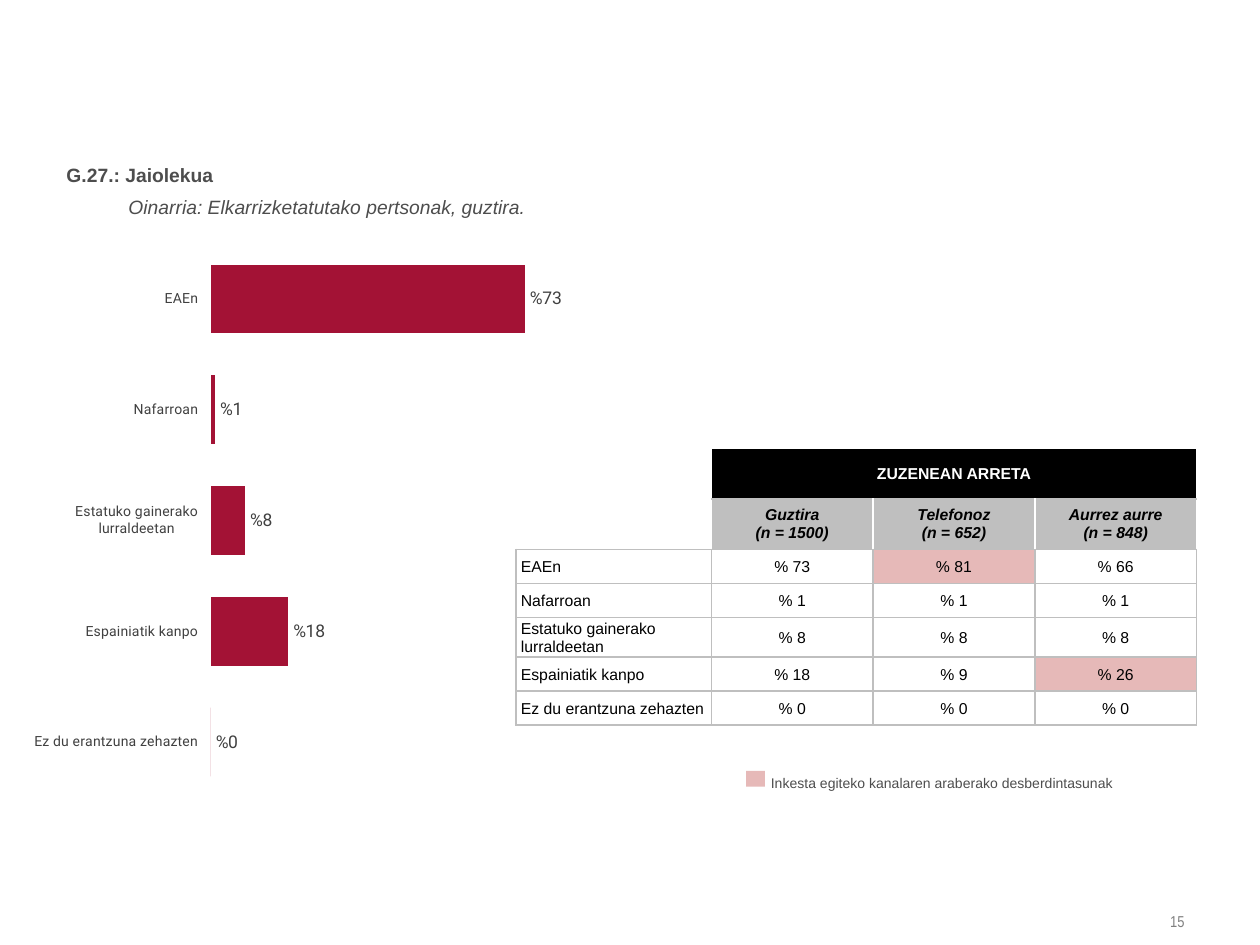
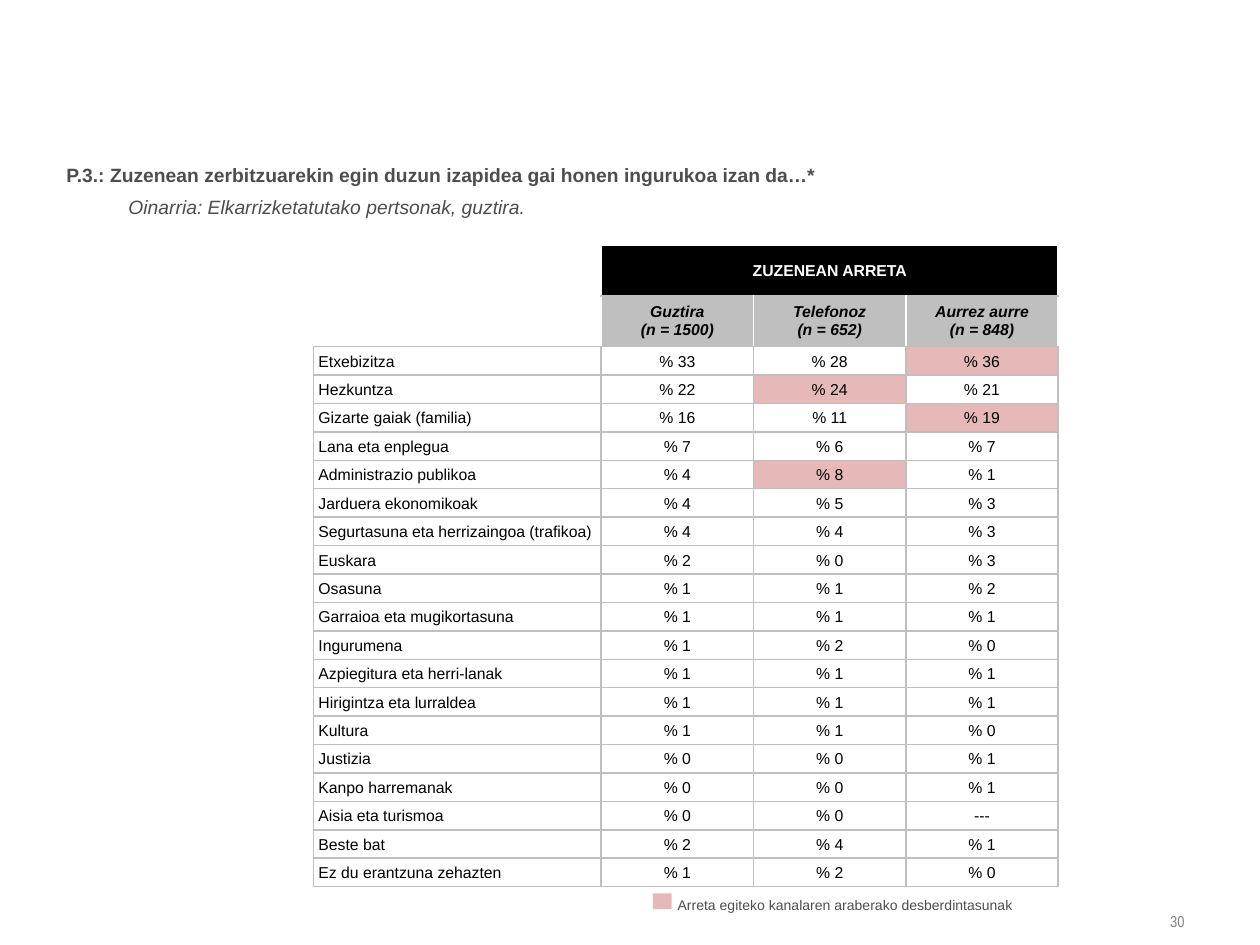
from dataclasses import dataclass
from typing import NamedTuple, Optional

from lxml import etree
from pptx import Presentation
from pptx.chart.data import CategoryChartData
from pptx.dml.color import RGBColor
from pptx.enum.chart import XL_CHART_TYPE, XL_LABEL_POSITION, XL_TICK_MARK
from pptx.enum.shapes import MSO_SHAPE
from pptx.enum.text import MSO_ANCHOR, MSO_AUTO_SIZE, PP_ALIGN
from pptx.oxml.ns import qn
from pptx.util import Cm, Pt

BAR = XL_CHART_TYPE.BAR_CLUSTERED
OUTSIDE_END = XL_LABEL_POSITION.OUTSIDE_END
TICK_NONE = XL_TICK_MARK.NONE
RECT = MSO_SHAPE.RECTANGLE
TOP, MIDDLE = MSO_ANCHOR.TOP, MSO_ANCHOR.MIDDLE
LEFT, CENTER, RIGHT = PP_ALIGN.LEFT, PP_ALIGN.CENTER, PP_ALIGN.RIGHT
NO_AUTOFIT = MSO_AUTO_SIZE.NONE
TITLE_ONLY = 5

COLORS = {
    "white": "FFFFFF",
    "black": "000000",
    "text": "4D4D4D",
    "chart_text": "404040",
    "page": "808080",
    "grid": "BFBFBF",
    "marked": "E6B9B8",
    "bar": "A31235",
}

# Font formats
QUESTION = {"name": "Arial", "size": Pt(11), "bold": True, "italic": False}
BASE = {"name": "Arial", "size": Pt(11), "bold": False, "italic": True}
LEGEND = {"name": "Arial", "size": Pt(8)}
PAGE = {"name": "Arial Narrow", "size": Pt(9)}
BODY = {"name": "Arial", "size": Pt(9), "bold": False, "italic": False}
BAND = {**BODY, "bold": True}
HEAD = {**BAND, "italic": True}

# Frame formats
BOX_INSETS = {"margin_left": Cm(0.1), "margin_top": Cm(0.13),
              "margin_right": Cm(0.25), "margin_bottom": Cm(0.13)}
VALUE_INSETS = {"margin_left": Cm(0.03), "margin_top": Cm(0.03),
                "margin_right": Cm(0.03), "margin_bottom": Cm(0)}
LABEL_INSETS = {**VALUE_INSETS, "margin_left": Cm(0.1), "margin_right": Cm(0)}

BASE_TEXT = "Oinarria: Elkarrizketatutako pertsonak, guztira."
BAND_TEXT = "ZUZENEAN ARRETA"
HEADS = ("Guztira\n(n = 1500)", "Telefonoz\n(n = 652)", "Aurrez aurre\n(n = 848)")


class Row(NamedTuple):
    label: str
    values: tuple[Optional[int], ...]
    marked: Optional[int] = None


@dataclass
class TableSpec:
    left: float
    top: float
    label_width: float
    value_width: float
    head_heights: tuple[float, float]
    body_height: float
    rows: list[Row]


@dataclass
class Legend:
    left: float
    top: float
    text: str


@dataclass
class Page:
    number: int
    question: str
    table: TableSpec
    legend: Legend
    has_chart: bool = False


PAGES = [
    Page(
        15, "G.27.: Jaiolekua",
        TableSpec(10.4, 9.04, 3.94, 3.26, (0.96, 1.02), 3.43, [
            Row("EAEn", (73, 81, 66), 1),
            Row("Nafarroan", (1, 1, 1)),
            Row("Estatuko gainerako lurraldeetan", (8, 8, 8)),
            Row("Espainiatik kanpo", (18, 9, 26), 2),
            Row("Ez du erantzuna zehazten", (0, 0, 0)),
        ]),
        Legend(15.04, 15.11, "Inkesta egiteko kanalaren araberako desberdintasunak"),
        has_chart=True,
    ),
    Page(
        30, "P.3.: Zuzenean zerbitzuarekin egin duzun izapidea gai honen ingurukoa izan da…*",
        TableSpec(6.32, 4.95, 5.8, 3.07, (0.8, 1.02), 10.9, [
            Row("Etxebizitza", (33, 28, 36), 2),
            Row("Hezkuntza", (22, 24, 21), 1),
            Row("Gizarte gaiak (familia)", (16, 11, 19), 2),
            Row("Lana eta enplegua", (7, 6, 7)),
            Row("Administrazio publikoa", (4, 8, 1), 1),
            Row("Jarduera ekonomikoak", (4, 5, 3)),
            Row("Segurtasuna eta herrizaingoa (trafikoa)", (4, 4, 3)),
            Row("Euskara", (2, 0, 3)),
            Row("Osasuna", (1, 1, 2)),
            Row("Garraioa eta mugikortasuna", (1, 1, 1)),
            Row("Ingurumena", (1, 2, 0)),
            Row("Azpiegitura eta herri-lanak", (1, 1, 1)),
            Row("Hirigintza eta lurraldea", (1, 1, 1)),
            Row("Kultura", (1, 1, 0)),
            Row("Justizia", (0, 0, 1)),
            Row("Kanpo harremanak", (0, 0, 1)),
            Row("Aisia eta turismoa", (0, 0, None)),
            Row("Beste bat", (2, 4, 1)),
            Row("Ez du erantzuna zehazten", (1, 2, 0)),
        ]),
        Legend(13.16, 17.58, "Arreta egiteko kanalaren araberako desberdintasunak"),
    ),
]


def rgb(color: str) -> RGBColor:
    return RGBColor.from_string(COLORS[color])


def apply(obj, fmt: dict) -> None:
    for name, value in fmt.items():
        setattr(obj, name, value)


def add_run(p, text: str, fmt: dict, color: str) -> None:
    r = p.add_run()
    r.text = text
    apply(r.font, fmt)
    r.font.color.rgb = rgb(color)


def set_indent(p, margin: float, first: float) -> None:
    pPr = p._p.get_or_add_pPr()
    pPr.set("marL", str(Cm(margin)))
    pPr.set("indent", str(Cm(first)))


def add_title(slide, question: str) -> None:
    sp = slide.shapes.title
    apply(sp, {"left": Cm(1.24), "top": Cm(3), "width": Cm(22.89), "height": Cm(1.53)})
    tf = sp.text_frame
    apply(tf, {**BOX_INSETS, "word_wrap": True, "auto_size": NO_AUTOFIT,
               "vertical_anchor": TOP})
    p = tf.paragraphs[0]
    apply(p, {"alignment": LEFT, "line_spacing": Pt(18)})
    set_indent(p, 1.25, -1.25)
    add_run(p, question, QUESTION, "text")
    p.add_line_break()
    etree.SubElement(p._p[-1], qn("a:rPr"), sz="1100")
    add_run(p, BASE_TEXT, BASE, "text")


def add_page_number(slide, number: int) -> None:
    tf = slide.shapes.add_textbox(Cm(22.1), Cm(18.21), Cm(2.03), Cm(0.71)).text_frame
    apply(tf, {"word_wrap": True, "vertical_anchor": MIDDLE})
    p = tf.paragraphs[0]
    p.alignment = RIGHT
    add_run(p, str(number), PAGE, "page")


def add_legend(slide, legend: Legend) -> None:
    sp = slide.shapes.add_shape(RECT, Cm(legend.left), Cm(legend.top + 0.43),
                                Cm(0.38), Cm(0.32))
    sp.shadow.inherit = False
    sp.fill.solid()
    sp.fill.fore_color.rgb = rgb("marked")
    sp.line.fill.background()
    tf = slide.shapes.add_textbox(Cm(legend.left + 0.25), Cm(legend.top),
                                  Cm(7.67), Cm(0.86)).text_frame
    apply(tf, {**BOX_INSETS, "word_wrap": True})
    p = tf.paragraphs[0]
    p.line_spacing = Pt(20)
    set_indent(p, 0.15, 0)
    add_run(p, legend.text, LEGEND, "text")


def set_borders(cell, row: int, col: int) -> None:
    """Grey grid, with white edges around the header cells."""
    white = set()
    if row < 2:
        white = {"L", "R"}
        if row == 0 or col == 0:
            white.add("T")
        if row == col == 0:
            white.add("B")
    tcPr = cell._tc.get_or_add_tcPr()
    for side in "LRTB":
        ln = etree.SubElement(tcPr, qn(f"a:ln{side}"), w=str(Pt(1)))
        fill = etree.SubElement(ln, qn("a:solidFill"))
        color = COLORS["white" if side in white else "grid"]
        etree.SubElement(fill, qn("a:srgbClr"), val=color)


def fill_cell(cell, text: str, fmt: dict, color: str, fill: str,
              align=CENTER, insets: Optional[dict] = None) -> None:
    cell.fill.solid()
    cell.fill.fore_color.rgb = rgb(fill)
    apply(cell, {"vertical_anchor": MIDDLE, **(insets or {})})
    tf = cell.text_frame
    for i, line in enumerate(text.split("\n")):
        p = tf.add_paragraph() if i else tf.paragraphs[0]
        p.alignment = align
        add_run(p, line, fmt, color)


def add_results_table(slide, spec: TableSpec) -> None:
    widths = [spec.label_width] + [spec.value_width] * len(HEADS)
    count = len(spec.rows)
    heights = list(spec.head_heights) + [spec.body_height / count] * count
    frame = slide.shapes.add_table(len(heights), len(widths), Cm(spec.left), Cm(spec.top),
                                   Cm(sum(widths)), Cm(sum(heights)))
    table = frame.table
    apply(table, {"first_row": False, "horz_banding": False})
    for column, width in zip(table.columns, widths):
        column.width = Cm(width)
    for i, height in enumerate(heights):
        table.rows[i].height = Cm(height)
        for j in range(len(widths)):
            set_borders(table.cell(i, j), i, j)

    # Header rows
    for i in range(2):
        table.cell(i, 0).fill.background()
    table.cell(0, 1).merge(table.cell(0, len(HEADS)))
    fill_cell(table.cell(0, 1), BAND_TEXT, BAND, "white", "black")
    for j, head in enumerate(HEADS, 1):
        fill_cell(table.cell(1, j), head, HEAD, "black", "grid")

    # Body rows
    for i, row in enumerate(spec.rows, 2):
        fill_cell(table.cell(i, 0), row.label, BODY, "black", "white", LEFT, LABEL_INSETS)
        for j, value in enumerate(row.values):
            text = "---" if value is None else f"% {value}"
            fill = "marked" if j == row.marked else "white"
            fill_cell(table.cell(i, j + 1), text, BODY, "black", fill, insets=VALUE_INSETS)


def set_plot_area(chart, **box: float) -> None:
    plot_area = chart._chartSpace.chart.plotArea
    for old in plot_area.findall(qn("c:layout")):
        plot_area.remove(old)
    layout = etree.Element(qn("c:layout"))
    manual = etree.SubElement(layout, qn("c:manualLayout"))
    settings = {"layoutTarget": "inner", "xMode": "edge", "yMode": "edge", **box}
    for tag, value in settings.items():
        etree.SubElement(manual, qn(f"c:{tag}"), val=str(value))
    plot_area.insert(0, layout)


def add_totals_chart(slide, rows: list[Row]) -> None:
    data = CategoryChartData(number_format="0%")
    data.categories = [row.label for row in rows]
    data.add_series("Guztira", [row.values[0] / 100 for row in rows])
    chart = slide.shapes.add_chart(BAR, Cm(0.69), Cm(4.8), Cm(12.24), Cm(11.28), data).chart
    apply(chart, {"has_legend": False, "has_title": False})
    apply(chart.font, {"name": "Roboto", "size": Pt(10)})
    chart.font.color.rgb = rgb("chart_text")
    set_plot_area(chart, x=0.29, y=0.01, w=0.71, h=0.99)

    axis = chart.category_axis
    apply(axis, {"reverse_order": True, "has_major_gridlines": False})
    axis.format.line.fill.background()
    axis.tick_labels.font.size = Pt(8)
    apply(chart.value_axis, {"visible": False, "has_major_gridlines": False,
                             "minimum_scale": 0, "maximum_scale": 1, "major_unit": 0.5,
                             "major_tick_mark": TICK_NONE})

    plot = chart.plots[0]
    apply(plot, {"gap_width": 61, "vary_by_categories": False, "has_data_labels": True})
    apply(plot.data_labels, {"show_value": True, "number_format": "%0",
                             "number_format_is_linked": False, "position": OUTSIDE_END})
    fill = plot.series[0].format.fill
    fill.solid()
    fill.fore_color.rgb = rgb("bar")


def main() -> None:
    prs = Presentation()
    apply(prs, {"slide_width": Cm(25.4), "slide_height": Cm(19.05)})
    for page in PAGES:
        slide = prs.slides.add_slide(prs.slide_layouts[TITLE_ONLY])
        add_page_number(slide, page.number)
        add_title(slide, page.question)
        add_results_table(slide, page.table)
        if page.has_chart:
            add_totals_chart(slide, page.table.rows)
        add_legend(slide, page.legend)
    prs.save("out.pptx")


if __name__ == "__main__":
    main()
